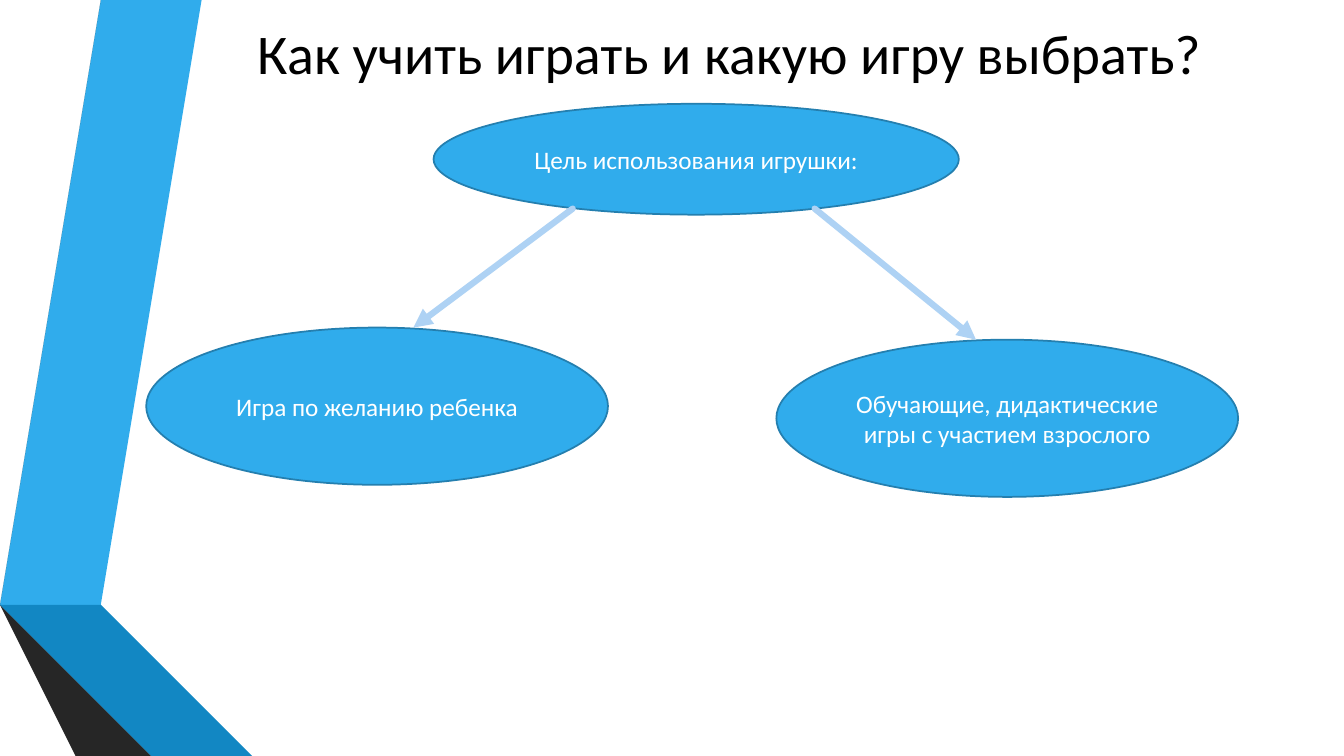
from lxml import etree
from pptx import Presentation
from pptx import util as u
from pptx.dml.color import RGBColor
from pptx.enum import shapes, text
from pptx.oxml.ns import qn

COLOURS = {
    "blue": "30ACEC",
    "blue_edge": "247FAF",
    "blue_dark": "1287C3",
    "blue_shade": "0C5A82",
    "grey": "595959",
    "grey_dark": "404040",
    "grey_shade": "262626",
    "arrow": "AED2F4",
    "white": "FFFFFF",
    "black": "000000",
}

RIBBONS = [
    ("blue", [(0.5, 5.78), (0.77, 5.83), (1.73, 0), (1.45, 0)]),
    ("grey", [(1.39, 0), (1.11, 0), (0.16, 5.73), (0.44, 5.77)]),
    ("grey_shade", [(0.16, 5.73), (1.45, 7.5), (1.51, 7.5)]),
    ("blue_shade", [(0.5, 5.79), (2.08, 7.5), (2.14, 7.5)]),
    ("blue_dark", [(0.5, 5.79), (2.14, 7.5), (2.83, 7.5), (0.77, 5.83), (0.5, 5.78)]),
    ("grey_dark", [(2.02, 7.5), (0.48, 5.83), (0.43, 5.78), (0.44, 5.77),
                   (0.16, 5.73), (1.51, 7.5)]),
]

GOALS = [
    ("Цель использования игрушки:", (4.3, 1.03, 5.21, 1.1)),
    ("Игра по желанию ребенка", (1.45, 3.25, 4.58, 1.56)),
    ("Обучающие, дидактические игры с участием взрослого", (7.7, 3.37, 4.58, 1.56)),
]

ARROWS = [
    ((5.68, 2.07), (4.1, 3.25)),
    ((8.08, 2.07), (9.68, 3.37)),
]


def colour(name):
    return RGBColor.from_string(COLOURS[name])


def fill_shape(shape, name):
    shape.shadow.inherit = False
    shape.fill.solid()
    shape.fill.fore_color.rgb = colour(name)


def write_text(shape, wording, size=18, ink="white"):
    frame = shape.text_frame
    frame.word_wrap = True
    frame.auto_size = text.MSO_AUTO_SIZE.NONE
    frame.vertical_anchor = text.MSO_ANCHOR.MIDDLE
    para = frame.paragraphs[0]
    para.alignment = text.PP_ALIGN.CENTER
    span = para.add_run()
    span.text = wording
    span.font.name = "Calibri"
    span.font.size = u.Pt(size)
    span.font.color.rgb = colour(ink)


def place(shape, bounds):
    shape.left, shape.top, shape.width, shape.height = map(u.Inches, bounds)


def add_ribbon(page, name, points):
    builder = page.shapes.build_freeform(*points[0], scale=u.Inches(1))
    builder.add_line_segments(points[1:], close=True)
    ribbon = builder.convert_to_shape()
    fill_shape(ribbon, name)
    ribbon.line.fill.background()


def add_goal(page, wording, bounds):
    ellipse = page.shapes.add_shape(shapes.MSO_SHAPE.OVAL, *map(u.Inches, bounds))
    fill_shape(ellipse, "blue")
    ellipse.line.color.rgb = colour("blue_edge")
    ellipse.line.width = u.Pt(1.25)
    write_text(ellipse, wording)


def add_arrow(page, start, end):
    arrow = page.shapes.add_connector(
        shapes.MSO_CONNECTOR.STRAIGHT, *map(u.Inches, start + end))
    arrow.line.color.rgb = colour("arrow")
    arrow.line.width = u.Pt(4.5)
    outline = arrow.line._get_or_add_ln()
    outline.set("cap", "rnd")
    etree.SubElement(outline, qn("a:tailEnd"), type="triangle")
    etree.SubElement(arrow._element.spPr, qn("a:effectLst"))


def main():
    deck = Presentation()
    deck.slide_width = u.Inches(13.33)
    deck.slide_height = u.Inches(7.5)
    page = deck.slides.add_slide(deck.slide_layouts[5])

    for name, points in RIBBONS:
        add_ribbon(page, name, points)

    title = page.shapes.title
    place(title, (1.75, 0, 10.96, 1.03))
    write_text(title, "Как учить играть и какую игру выбрать?", size=40, ink="black")

    for wording, bounds in GOALS:
        add_goal(page, wording, bounds)
    for start, end in ARROWS:
        add_arrow(page, start, end)

    deck.save("out.pptx")


if __name__ == "__main__":
    main()
